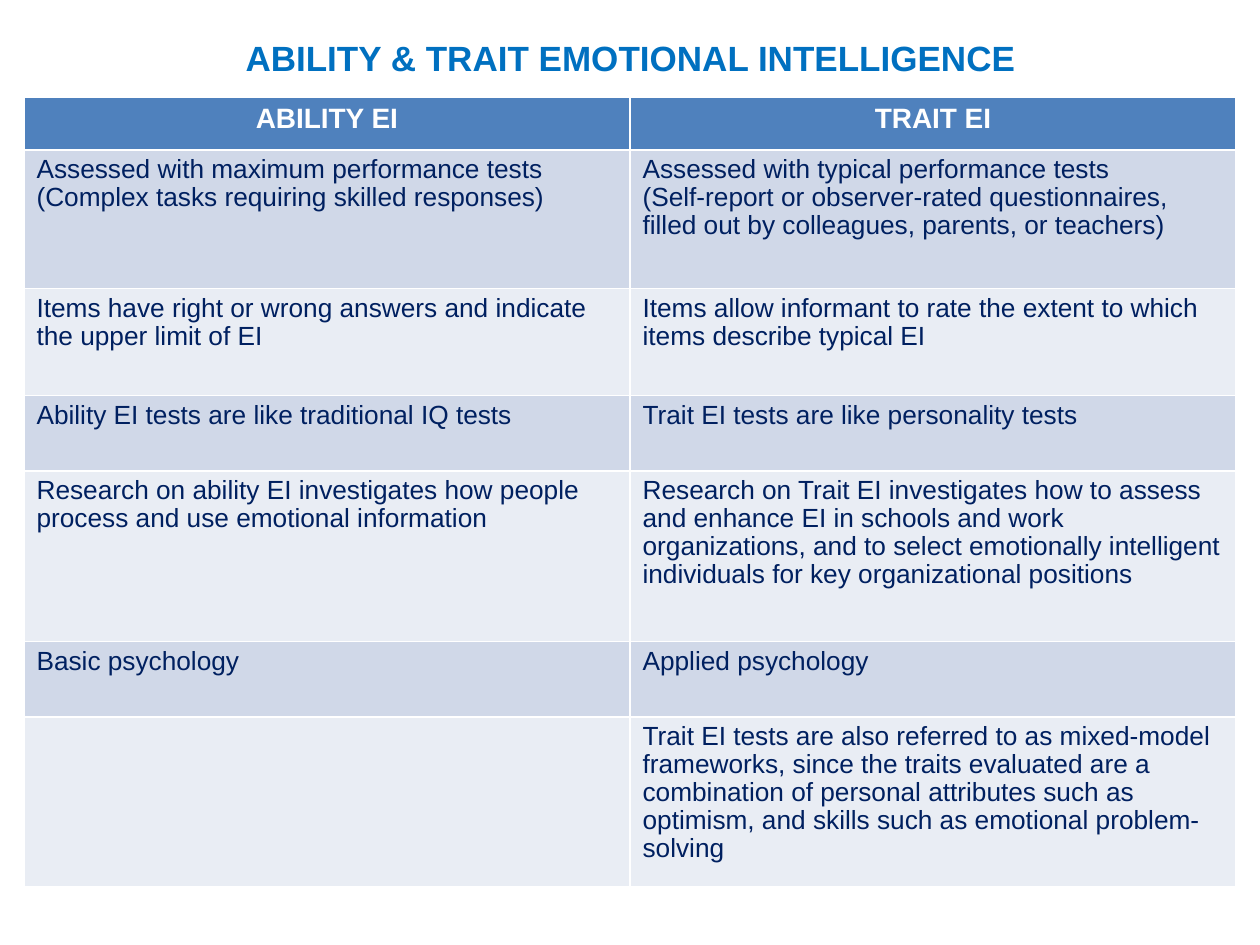
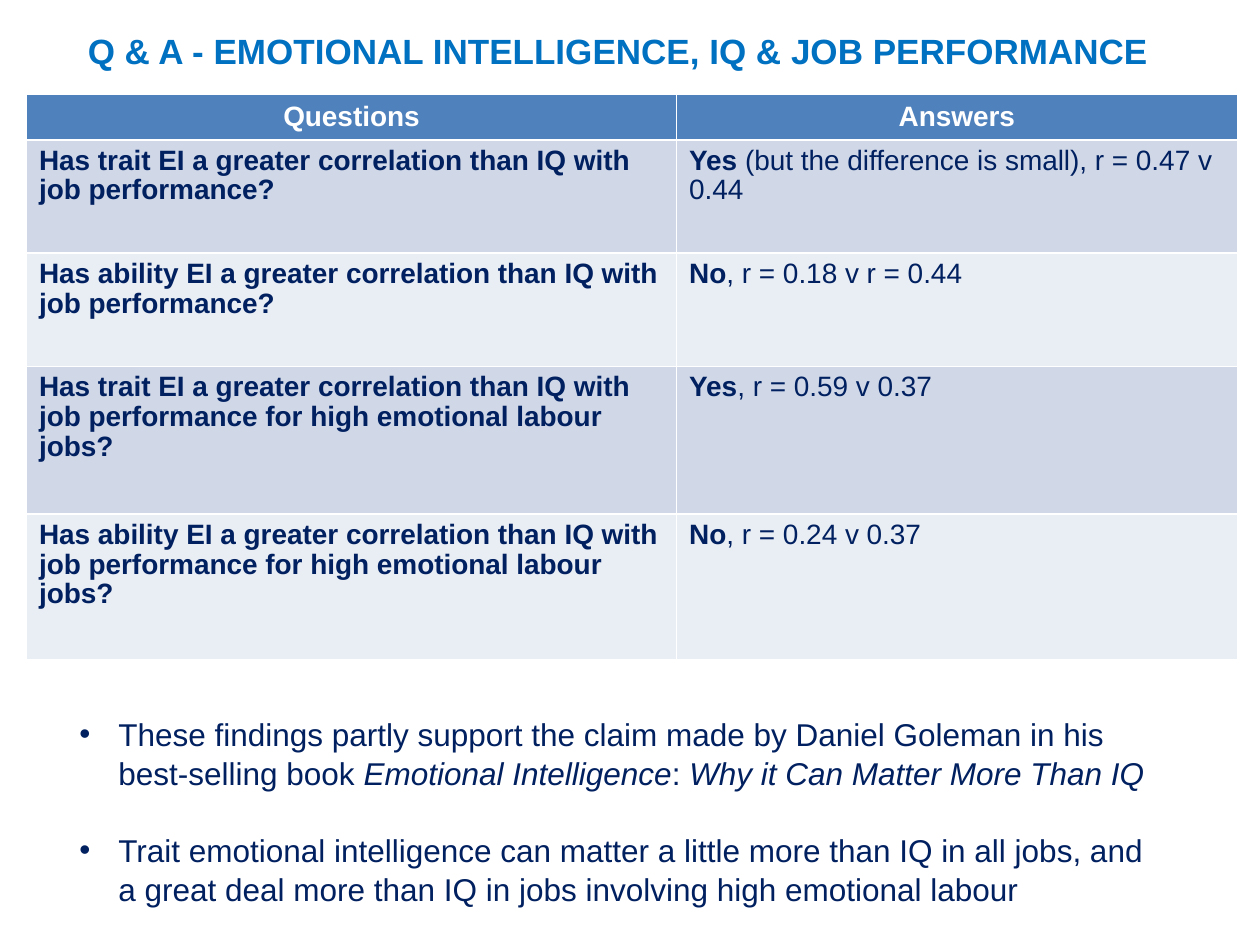
import pptx
import pptx.util
import pptx.dml.color
import pptx.enum.text

Inches, Pt = pptx.util.Inches, pptx.util.Pt
CENTER = pptx.enum.text.PP_ALIGN.CENTER
LEFT = pptx.enum.text.PP_ALIGN.LEFT
BLUE, NAVY, WHITE = "0070C0", "002060", "FFFFFF"
HEAD, BANDS = "4F81BD", ("D0D8E8", "E9EDF4")


def paint(item, color):
    """Give a font or a fill a solid hex colour."""
    fill = item.fill if hasattr(item, "fill") else item
    fill.solid()
    fill.fore_color.rgb = pptx.dml.color.RGBColor.from_string(color)


def write(frame, paras, size=16, color=NAVY, bold=False, align=LEFT, line=1.0, gap=0, hang=0):
    """Fill a frame; a paragraph is a string or a list of (text, marks) with marks b and i."""
    for n, runs in enumerate(paras):
        para = frame.paragraphs[0] if n == 0 else frame.add_paragraph()
        para.alignment = align
        para.line_spacing = line
        para.space_before = Pt(gap if n else 0)
        if hang:
            props = para._p.get_or_add_pPr()
            props.set("marL", str(Inches(hang)))
            props.set("indent", str(-Inches(hang)))
        for text, marks in [(runs, "")] if isinstance(runs, str) else runs:
            run = para.add_run()
            run.text = text
            font = run.font
            font.name, font.size = "Arial", Pt(size)
            font.bold = bold or "b" in marks
            font.italic = "i" in marks
            paint(font, color)


traits = [
    (["ABILITY EI"], ["TRAIT EI"]),
    (["Assessed with maximum performance tests",
      "(Complex tasks requiring skilled responses)"],
     ["Assessed with typical performance tests",
      "(Self-report or observer-rated questionnaires, filled out by colleagues, "
      "parents, or teachers)"]),
    (["Items have right or wrong answers and indicate the upper limit of EI"],
     ["Items allow informant to rate the extent to which items describe typical EI"]),
    (["Ability EI tests are like traditional IQ tests"],
     ["Trait EI tests are like personality tests"]),
    (["Research on ability EI investigates how people process and use emotional information"],
     ["Research on Trait EI investigates how to assess and enhance EI in schools and work "
      "organizations, and to select emotionally intelligent individuals for key "
      "organizational positions"]),
    (["Basic psychology"], ["Applied psychology"]),
    ([],
     ["Trait EI tests are also referred to as mixed-model frameworks, since the traits "
      "evaluated are a combination of personal attributes such as optimism, and skills "
      "such as emotional problem-solving"]),
]

# Each question is asked of both kinds of EI, first for all jobs, then for emotional labour
answers = [(["Questions"], ["Answers"])]
for tail, pairs in (
    ("?", [("Yes", " (but the difference is small), r = 0.47 v 0.44"),
           ("No", ", r = 0.18 v r = 0.44")]),
    (" for high emotional labour jobs?", [("Yes", ", r = 0.59 v 0.37"),
                                          ("No", ", r = 0.24 v 0.37")]),
):
    for kind, (reply, rest) in zip(("trait", "ability"), pairs):
        ask = f"Has {kind} EI a greater correlation than IQ with job performance{tail}"
        answers.append(([[(ask, "b")]], [[(reply, "b"), (rest, "")]]))

claims = [
    [("These findings partly support the claim made by Daniel Goleman in his "
      "best-selling book ", ""),
     ("Emotional Intelligence", "i"), (": ", ""),
     ("Why it Can Matter More Than IQ", "i")],
    "Trait emotional intelligence can matter a little more than IQ in all jobs, "
    "and a great deal more than IQ in jobs involving high emotional labour",
]

# Layout, title, title box, table corner, column widths, row heights, text size, cells, list
pages = [
    (5, "ABILITY & TRAIT EMOTIONAL INTELLIGENCE", (1.69, 0.24, 6.63, 0.44), (0.19, 0.77),
     (4.81, 4.81), (0.42, 1.1, 0.85, 0.6, 1.35, 0.6, 1.35), 15, traits, []),
    (1, "Q & A - EMOTIONAL INTELLIGENCE, IQ & JOB PERFORMANCE", (0.44, 0.18, 8.93, 0.44),
     (0.21, 0.75), (5.16, 4.45), (0.36, 0.9, 0.9, 1.17, 1.16), 16, answers, claims),
]

deck = pptx.Presentation()
deck.slide_width, deck.slide_height = Inches(10), Inches(7.5)

for layout, name, box, corner, widths, heights, size, cells, notes in pages:
    slide = deck.slides.add_slide(deck.slide_layouts[layout])
    title = slide.shapes.title
    title.left, title.top, title.width, title.height = map(Inches, box)
    write(title.text_frame, [name], size=20, color=BLUE, bold=True, align=CENTER)

    room = map(Inches, (*corner, sum(widths), sum(heights)))
    table = slide.shapes.add_table(len(heights), len(widths), *room).table
    for column, width in zip(table.columns, widths):
        column.width = Inches(width)
    for r, (height, row) in enumerate(zip(heights, cells)):
        table.rows[r].height = Inches(height)
        for c, paras in enumerate(row):
            cell = table.cell(r, c)
            if r == 0:
                paint(cell, HEAD)
                write(cell.text_frame, paras, color=WHITE, bold=True, align=CENTER)
            else:
                paint(cell, BANDS[(r - 1) % 2])
                write(cell.text_frame, paras, size=size, line=0.96)

    if notes:
        body = slide.placeholders[1]
        body.left, body.top, body.width, body.height = map(Inches, (0.53, 5.61, 8.76, 1.62))
        body.text_frame.auto_size = pptx.enum.text.MSO_AUTO_SIZE.NONE
        write(body.text_frame, notes, size=18, line=1.04, gap=21.5, hang=0.31)

deck.save("out.pptx")
